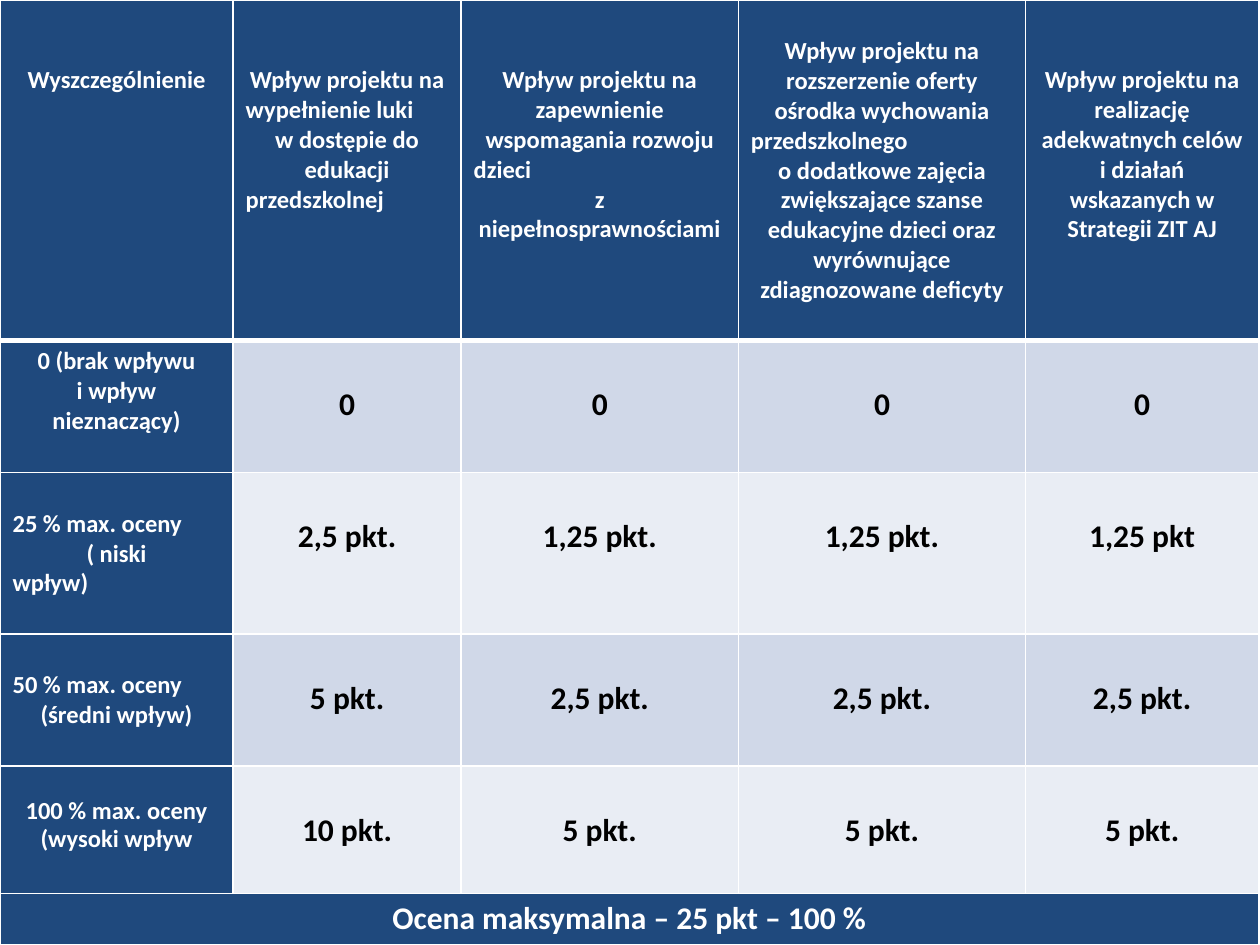
from pptx import Presentation
from pptx.dml.color import RGBColor
from pptx.enum.text import MSO_ANCHOR, PP_ALIGN as Align
from pptx.oxml import parse_xml
from pptx.oxml.ns import nsdecls
from pptx.util import Inches, Pt

NAVY, WHITE, BLACK = "1F497D", "FFFFFF", "000000"
BANDS = ["D0D8E8", "E9EDF4"]


def color(value):
    return RGBColor.from_string(value)


def fill_cell(cell, lines, fill, ink, size, top, borders):
    """Write the lines, centred unless marked with a leading '<' for left."""
    for side, width in borders.items():
        cell._tc.get_or_add_tcPr().append(parse_xml(
            f'<a:{side} {nsdecls("a")} w="{Pt(width)}"><a:solidFill>'
            f'<a:srgbClr val="{WHITE}"/></a:solidFill></a:{side}>'))
    cell.fill.solid()
    cell.fill.fore_color.rgb = color(fill)
    cell.vertical_anchor = MSO_ANCHOR.TOP
    cell.margin_top = Inches(top)
    cell.text_frame.text = "\n".join(line.lstrip("<") for line in lines)
    for para, line in zip(cell.text_frame.paragraphs, lines):
        para.alignment = Align.LEFT if line.startswith("<") else Align.CENTER
        for span in para.runs:
            span.font.name = "Calibri"
            span.font.size = Pt(size)
            span.font.bold = True
            span.font.color.rgb = color(ink)


deck = Presentation()
deck.slide_width, deck.slide_height = Inches(10), Inches(7.5)
page = deck.slides.add_slide(deck.slide_layouts[6])

# Content: (lines, top margin) for the headings and row labels
headings = [
    (["Wyszczególnienie"], 0.52),
    (["Wpływ projektu na", "<wypełnienie luki", "w dostępie do edukacji",
      "<przedszkolnej"], 0.52),
    (["Wpływ projektu na zapewnienie wspomagania rozwoju", "<dzieci", "z",
      "niepełnosprawnościami"], 0.52),
    (["Wpływ projektu na rozszerzenie oferty ośrodka wychowania",
      "<przedszkolnego", "o dodatkowe zajęcia zwiększające szanse edukacyjne "
      "dzieci oraz wyrównujące zdiagnozowane deficyty"], 0.29),
    (["Wpływ projektu na realizację adekwatnych celów i działań wskazanych w "
      "Strategii ZIT AJ"], 0.52),
]
ratings = [
    (["0 (brak wpływu", "i wpływ nieznaczący)"], 0.05, ["0", "0", "0", "0"]),
    (["<25 % max. oceny", "( niski", "<wpływ)"], 0.29,
     ["2,5 pkt.", "1,25 pkt.", "1,25 pkt.", "1,25 pkt"]),
    (["<50 % max. oceny", "(średni wpływ)"], 0.29,
     ["5 pkt.", "2,5 pkt.", "2,5 pkt.", "2,5 pkt."]),
    (["100 % max. oceny", "(wysoki wpływ"], 0.25,
     ["10 pkt.", "5 pkt.", "5 pkt.", "5 pkt."]),
]

# Table grid
widths = [1.85, 1.81, 2.2, 2.28, 1.85]
heights = [2.7, 1.05, 1.28, 1.05, 1.01, 0.41]
table = page.shapes.add_table(len(heights), len(widths), 0, 0,
                              Inches(sum(widths)), Inches(sum(heights))).table
for column, width in zip(table.columns, widths):
    column.width = Inches(width)
for row, height in zip(table.rows, heights):
    row.height = Inches(height)

thin = {"lnL": 1, "lnR": 1, "lnT": 1, "lnB": 1}
under_heading = {**thin, "lnT": 3}

# Heading row, with a thick rule below
for c, (lines, top) in enumerate(headings):
    fill_cell(table.cell(0, c), lines, NAVY, WHITE, 14, top, {**thin, "lnB": 3})

# Rating rows
for r, (label, top, points) in enumerate(ratings, start=1):
    borders = under_heading if r == 1 else thin
    fill_cell(table.cell(r, 0), label, NAVY, WHITE, 14, top, borders)
    for c, value in enumerate(points, start=1):
        fill_cell(table.cell(r, c), [value], BANDS[(r - 1) % 2], BLACK, 18,
                  0.36, borders)
for para in table.cell(4, 0).text_frame.paragraphs:
    para.line_spacing = Pt(16)

# Total row
total = table.cell(5, 0)
total.merge(table.cell(5, 4))
fill_cell(total, ["Ocena maksymalna – 25 pkt – 100 %"], NAVY, WHITE, 18, 0.05, thin)

deck.save("out.pptx")
